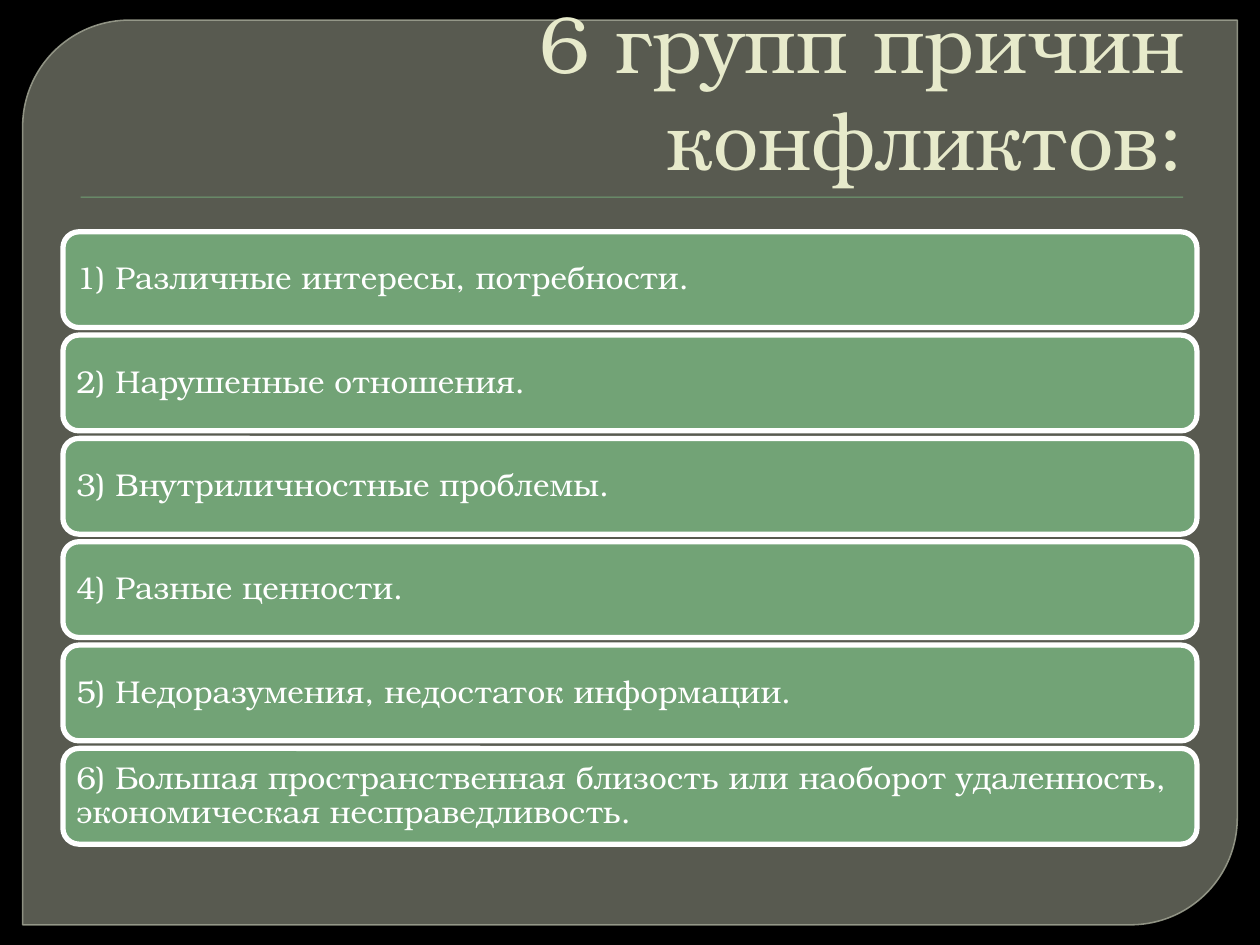
from lxml.etree import SubElement
from pptx import Presentation
from pptx.dml.color import RGBColor
from pptx.enum.shapes import MSO_SHAPE
from pptx.enum.text import MSO_ANCHOR, PP_ALIGN
from pptx.oxml.ns import qn
from pptx.util import Inches, Pt

FONT = "TeX Gyre Bonum"
BLACK = RGBColor(0x00, 0x00, 0x00)
WHITE = RGBColor(0xFF, 0xFF, 0xFF)
GREEN = RGBColor(0x72, 0xA3, 0x76)
CREAM = RGBColor(0xE7, 0xEA, 0xCB)
PANEL = RGBColor(0x88, 0x8B, 0x7B)
PANEL_EDGE = RGBColor(0x9D, 0xA0, 0x90)

MARGIN, CONTENT_WIDTH = 0.5, 9
ROWS_TOP, ROW_STEP, ROW_HEIGHT = 1.84, 0.82, 0.76

TITLE = "6 групп причин конфликтов:"
CAUSES = [
    "Различные интересы, потребности.",
    "Нарушенные отношения.",
    "Внутриличностные проблемы.",
    "Разные ценности.",
    "Недоразумения, недостаток информации.",
    "Большая пространственная близость или наоборот удаленность, "
    "экономическая несправедливость.",
]


def set_alpha(fill_parent, percent):
    """Make the solid colour under fill_parent partly transparent."""
    color = fill_parent.find(qn("a:solidFill")).find(qn("a:srgbClr"))
    SubElement(color, qn("a:alpha"), val=str(percent * 1000))


def add_box(slide, kind, box, fill, line=None, line_width=0):
    sp = slide.shapes.add_shape(kind, *map(Inches, box))
    sp.shadow.inherit = False
    sp.fill.solid()
    sp.fill.fore_color.rgb = fill
    if line is None:
        sp.line.fill.background()
    else:
        sp.line.color.rgb = line
        sp.line.width = Pt(line_width)
    return sp


def set_text(sp, text, size, color, align, anchor):
    tf = sp.text_frame
    tf.word_wrap = True
    tf.vertical_anchor = anchor
    p = tf.paragraphs[0]
    p.text = text
    p.alignment = align
    p.font.name = FONT
    p.font.size = Pt(size)
    p.font.color.rgb = color
    return tf


def add_panel(slide):
    sp = add_box(slide, MSO_SHAPE.ROUND_2_DIAG_RECTANGLE,
                 (0.18, 0.16, 9.64, 7.18), PANEL, PANEL_EDGE, 0.87)
    sp.adjustments[0] = 0.118
    sp.adjustments[1] = 0
    set_alpha(sp.element.spPr, 65)
    set_alpha(sp.element.spPr.find(qn("a:ln")), 88)


def add_title(slide):
    add_box(slide, MSO_SHAPE.RECTANGLE, (0.64, 1.56, 8.75, 0.01), GREEN)
    sp = slide.shapes.add_textbox(
        *map(Inches, (MARGIN, 0.28, CONTENT_WIDTH, 1.25)))
    set_text(sp, TITLE, 46, CREAM, PP_ALIGN.RIGHT, MSO_ANCHOR.BOTTOM)


def add_cause(slide, row, text):
    box = (MARGIN, ROWS_TOP + row * ROW_STEP, CONTENT_WIDTH, ROW_HEIGHT)
    sp = add_box(slide, MSO_SHAPE.ROUNDED_RECTANGLE, box, GREEN, WHITE, 3)
    tf = set_text(sp, f"{row + 1}) {text}", 18, WHITE,
                  PP_ALIGN.LEFT, MSO_ANCHOR.MIDDLE)
    tf.margin_left = tf.margin_right = Inches(0.07)
    tf.margin_top = tf.margin_bottom = Inches(0.07)
    tf.paragraphs[0].line_spacing = 0.9


def main():
    prs = Presentation()
    prs.slide_width, prs.slide_height = Inches(10), Inches(7.5)
    s = prs.slides.add_slide(prs.slide_layouts[6])
    s.background.fill.solid()
    s.background.fill.fore_color.rgb = BLACK
    add_panel(s)
    add_title(s)
    for row, text in enumerate(CAUSES):
        add_cause(s, row, text)
    prs.save("out.pptx")


if __name__ == "__main__":
    main()
